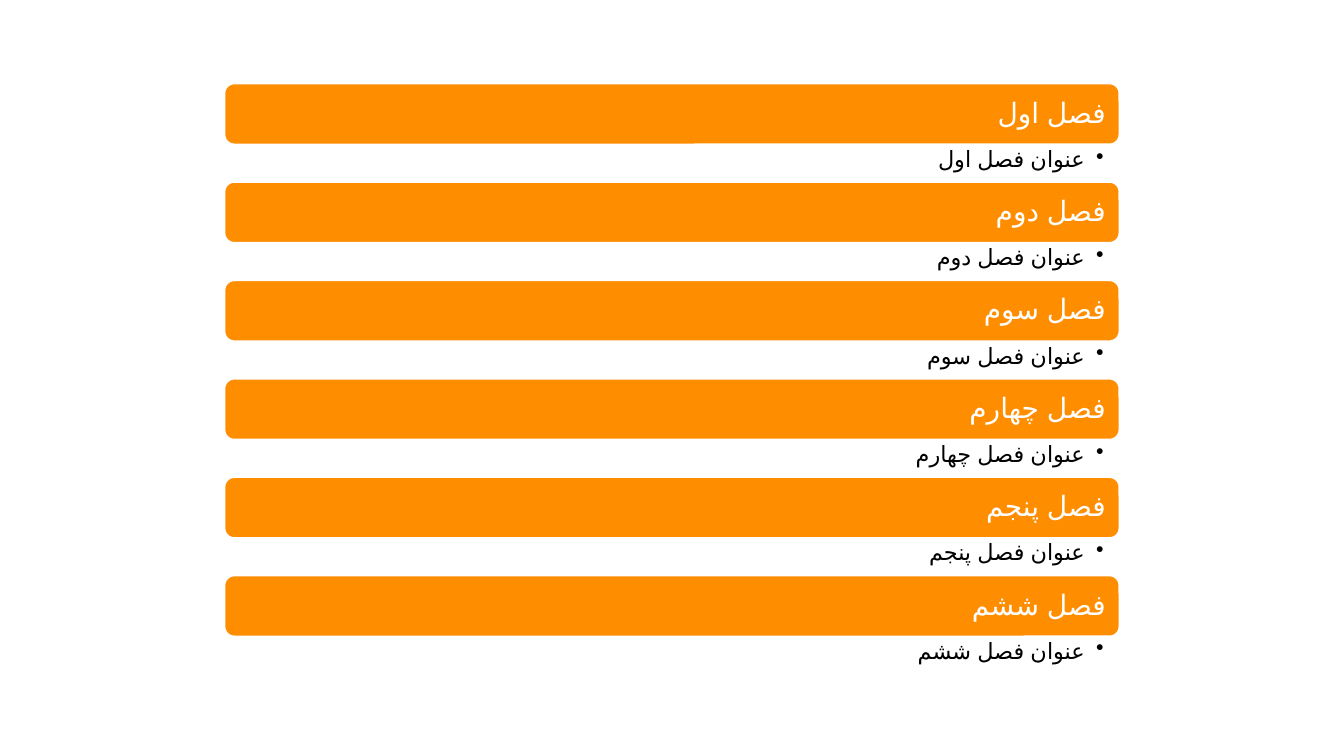
from lxml import etree
from pptx import Presentation
from pptx.dml.color import RGBColor
from pptx.enum.lang import MSO_LANGUAGE_ID
from pptx.enum.shapes import MSO_SHAPE
from pptx.enum.text import MSO_ANCHOR, PP_ALIGN
from pptx.oxml.ns import qn
from pptx.util import Emu, Pt

# Content
CHAPTERS = [
    ("فصل اول", "عنوان فصل اول"),
    ("فصل دوم", "عنوان فصل دوم"),
    ("فصل سوم", "عنوان فصل سوم"),
    ("فصل چهارم", "عنوان فصل چهارم"),
    ("فصل پنجم", "عنوان فصل پنجم"),
    ("فصل ششم", "عنوان فصل ششم"),
]

# Look
ORANGE = RGBColor(0xFF, 0x8D, 0x00)
WHITE = RGBColor(0xFF, 0xFF, 0xFF)
BLACK = RGBColor(0x00, 0x00, 0x00)
FONT = "Arial"
ROUNDED, MIDDLE, TOP = MSO_SHAPE.ROUNDED_RECTANGLE, MSO_ANCHOR.MIDDLE, MSO_ANCHOR.TOP
RIGHT, PERSIAN = PP_ALIGN.RIGHT, MSO_LANGUAGE_ID.FARSI

# Layout in px
SLIDE_WIDTH, SLIDE_HEIGHT = 1344, 756
LEFT, WIDTH = 224, 896
FIRST_TOP, LAST_TOP = 83, 575
BAR_HEIGHT, CAPTION_HEIGHT = 62, 36
BULLET_INDENT = 19
BAR_FRAME = dict(margin_left=11, margin_right=11, margin_top=11, margin_bottom=11)
CAPTION_FRAME = dict(margin_left=28, margin_right=16, margin_top=3, margin_bottom=3)


def px(length):
    return Emu(round(length * 12192000 / SLIDE_WIDTH))


def write(box, text, margins, anchor, size, color, bulleted=False):
    """Fill a box with one right-to-left line."""
    frame = box.text_frame
    frame.word_wrap = True
    frame.vertical_anchor = anchor
    for name, value in margins.items():
        setattr(frame, name, px(value))

    para = frame.paragraphs[0]
    para.alignment, para.line_spacing = RIGHT, 0.9
    properties = para._p.get_or_add_pPr()
    properties.set("rtl", "1")
    if bulleted:
        properties.set("marL", str(px(BULLET_INDENT)))
        properties.set("indent", str(px(-BULLET_INDENT)))
        etree.SubElement(properties, qn("a:buChar"), char="•")

    span = para.add_run()
    span.text = text
    for name, value in dict(name=FONT, size=Pt(size), language_id=PERSIAN).items():
        setattr(span.font, name, value)
    span.font.color.rgb = color
    etree.SubElement(span._r.get_or_add_rPr(), qn("a:cs"), typeface=FONT)


deck = Presentation()
deck.slide_width, deck.slide_height = px(SLIDE_WIDTH), px(SLIDE_HEIGHT)
page = deck.slides.add_slide(deck.slide_layouts[6])

pitch = (LAST_TOP - FIRST_TOP) / (len(CHAPTERS) - 1)
for index, (chapter, title) in enumerate(CHAPTERS):
    top = FIRST_TOP + index * pitch

    # Chapter bar
    bar = page.shapes.add_shape(ROUNDED, px(LEFT), px(top), px(WIDTH), px(BAR_HEIGHT))
    bar.shadow.inherit = False
    bar.fill.solid()
    bar.fill.fore_color.rgb = ORANGE
    bar.line.color.rgb = WHITE
    bar.line.width = Pt(2)
    write(bar, chapter, BAR_FRAME, MIDDLE, 20, WHITE)

    # Chapter title below the bar
    caption = page.shapes.add_textbox(px(LEFT), px(top + BAR_HEIGHT), px(WIDTH), px(CAPTION_HEIGHT))
    write(caption, title, CAPTION_FRAME, TOP, 16, BLACK, bulleted=True)

deck.save("out.pptx")
